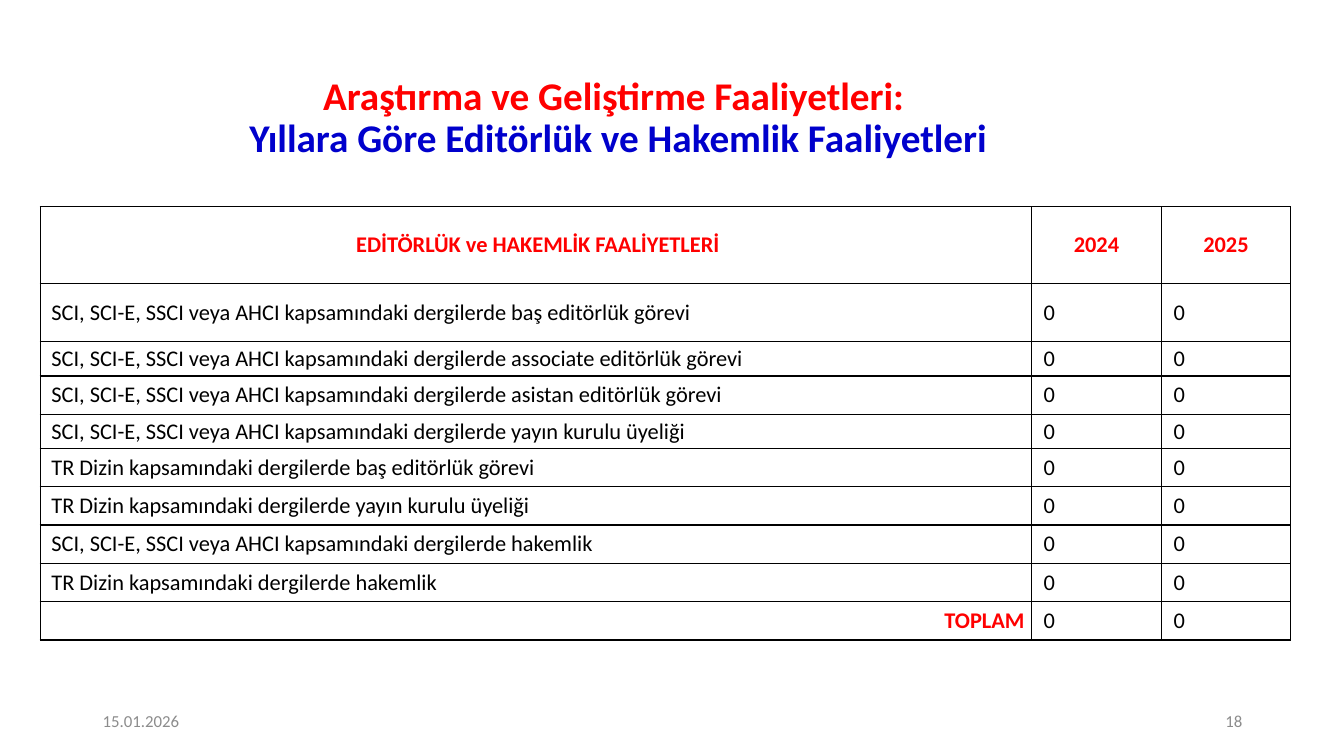
from lxml import etree
from pptx import Presentation
from pptx.dml.color import RGBColor
from pptx.enum.text import MSO_ANCHOR, PP_ALIGN
from pptx.oxml.ns import qn
from pptx.util import Inches, Pt

LEFT, CENTER, RIGHT = PP_ALIGN.LEFT, PP_ALIGN.CENTER, PP_ALIGN.RIGHT
MIDDLE = MSO_ANCHOR.MIDDLE
RED = RGBColor(0xFF, 0x00, 0x00)
BLUE = RGBColor(0x00, 0x00, 0xCC)
BLACK = RGBColor(0x00, 0x00, 0x00)
WHITE = RGBColor(0xFF, 0xFF, 0xFF)
GRAY = RGBColor(0x8C, 0x8C, 0x8C)


def add_span(para, text, size, color, bold=False):
    span = para.add_run()
    span.text = text
    span.font.name = "Calibri"
    span.font.size = Pt(size)
    span.font.color.rgb = color
    span.font.bold = bold


def add_box(page, left, top, width, height, align):
    box = page.shapes.add_textbox(Inches(left), Inches(top), Inches(width), Inches(height))
    box.text_frame.word_wrap = True
    box.text_frame.vertical_anchor = MIDDLE
    para = box.text_frame.paragraphs[0]
    para.alignment = align
    return para


deck = Presentation()
deck.slide_width = Inches(13.33)
deck.slide_height = Inches(7.5)
page = deck.slides.add_slide(deck.slide_layouts[6])

title = add_box(page, 0.51, 0.77, 11.24, 0.81, CENTER)
title.line_spacing = 0.9
add_span(title, "Araştırma ve Geliştirme Faaliyetleri: ", 28, RED, True)
title.add_line_break()
add_span(title, "Yıllara Göre Editörlük ve Hakemlik Faaliyetleri", 28, BLUE, True)

for left, text, align in [(0.92, "15.01.2026", LEFT), (9.42, "18", RIGHT)]:
    add_span(add_box(page, left, 6.95, 3, 0.4, align), text, 12, GRAY)

INDEXED = "SCI, SCI-E, SSCI veya AHCI kapsamındaki dergilerde "
NATIONAL = "TR Dizin kapsamındaki dergilerde "
activities = [
    INDEXED + "baş editörlük görevi",
    INDEXED + "associate editörlük görevi",
    INDEXED + "asistan editörlük görevi",
    INDEXED + "yayın kurulu üyeliği",
    NATIONAL + "baş editörlük görevi",
    NATIONAL + "yayın kurulu üyeliği",
    INDEXED + "hakemlik",
    NATIONAL + "hakemlik",
    "TOPLAM",
]
rows = [("EDİTÖRLÜK ve HAKEMLİK FAALİYETLERİ", "2024", "2025")]
rows += [(activity, "0", "0") for activity in activities]
column_widths = [9.83, 1.29, 1.28]
row_heights = [0.76, 0.58, 0.34, 0.38, 0.34] + [0.38] * 5

table = page.shapes.add_table(
    len(rows), len(column_widths), Inches(0.4), Inches(2.05),
    Inches(sum(column_widths)), Inches(sum(row_heights)),
).table
table.first_row = False
table.horz_banding = False
for column, width in zip(table.columns, column_widths):
    column.width = Inches(width)

for row_index, (values, height) in enumerate(zip(rows, row_heights)):
    table.rows[row_index].height = Inches(height)
    for column_index, text in enumerate(values):
        cell = table.cell(row_index, column_index)
        cell.vertical_anchor = MIDDLE
        cell.margin_left = cell.margin_right = Inches(0.07)
        cell.margin_top = cell.margin_bottom = 0
        properties = cell._tc.get_or_add_tcPr()
        for side in ("a:lnL", "a:lnR", "a:lnT", "a:lnB"):
            border = etree.SubElement(properties, qn(side), w=str(Pt(1)))
            paint = etree.SubElement(border, qn("a:solidFill"))
            etree.SubElement(paint, qn("a:srgbClr"), val=str(BLACK))
        cell.fill.solid()
        cell.fill.fore_color.rgb = WHITE

        is_header = row_index == 0
        is_total = text == "TOPLAM"
        para = cell.text_frame.paragraphs[0]
        para.alignment = CENTER if is_header else RIGHT if is_total else LEFT
        if para.alignment == LEFT or (is_header and column_index == 0):
            indent = 0.04 if column_index == 0 else 0.05
            para._p.get_or_add_pPr().set("marL", str(Inches(indent)))
        emphasized = is_header or is_total
        add_span(para, text, 16, RED if emphasized else BLACK, emphasized)

deck.save("out.pptx")
